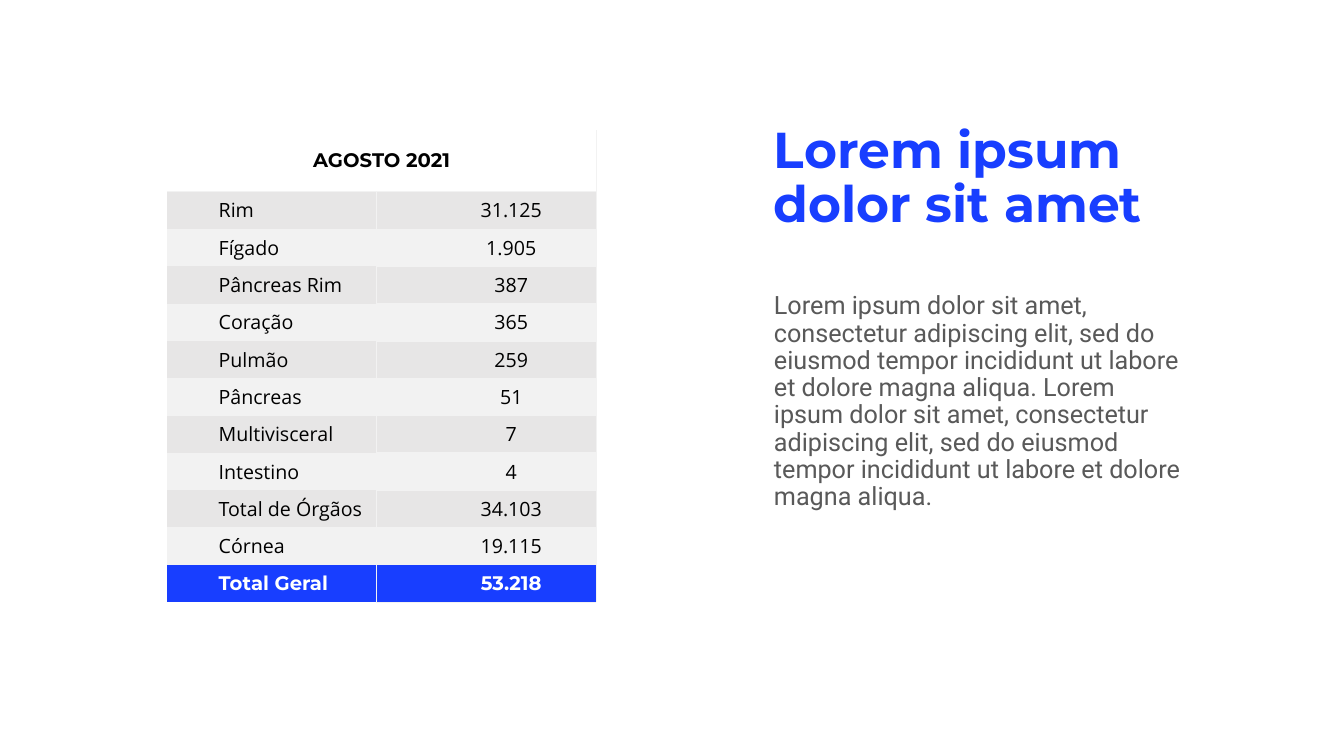
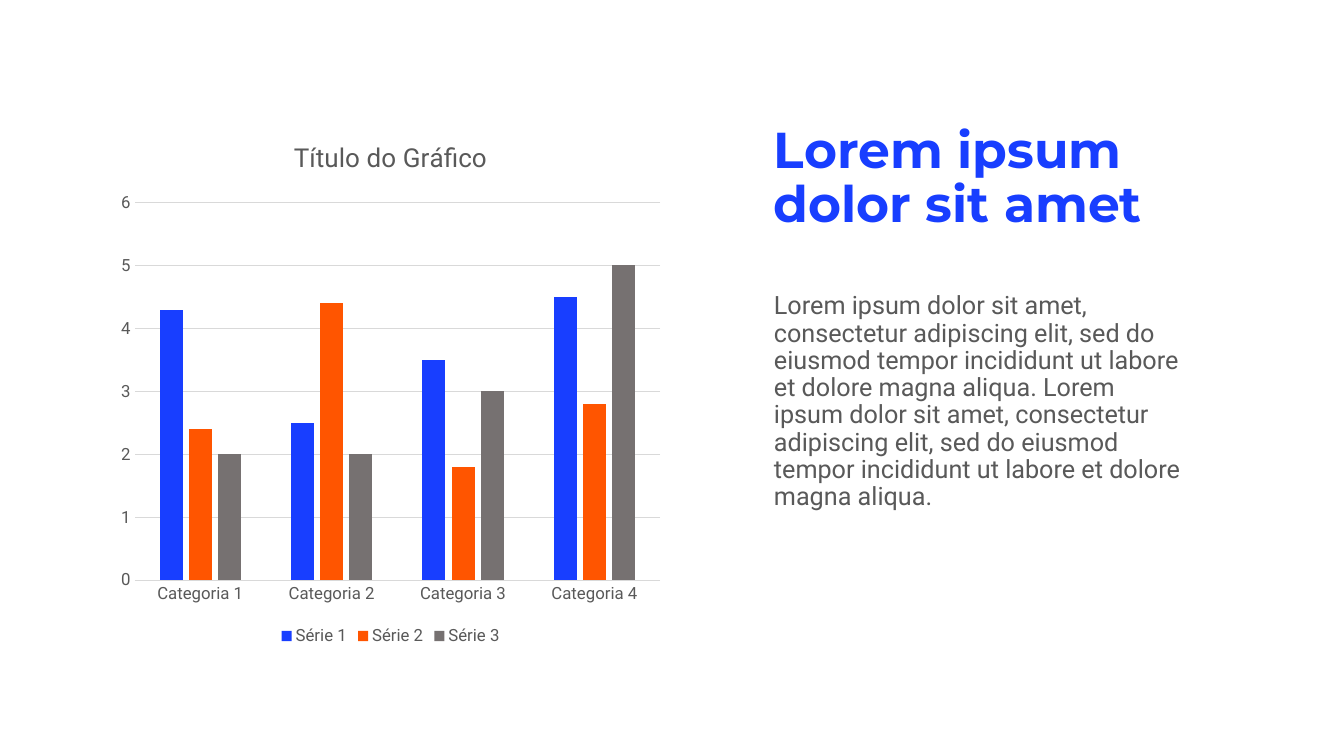
from dataclasses import dataclass

from lxml import etree
from pptx import Presentation
from pptx.chart import data as chart_data
from pptx.dml.color import RGBColor
from pptx.enum import chart as chart_enum, text
from pptx.oxml import ns
from pptx.util import Cm, Pt

HEADING = "Lorem ipsum dolor sit amet"
SENTENCE = (
    "Lorem ipsum dolor sit amet, consectetur adipiscing elit, sed do eiusmod "
    "tempor incididunt ut labore et dolore magna aliqua."
)
BODY = f"{SENTENCE} {SENTENCE}"

TABLE_TITLE = "AGOSTO 2021"
TRANSPLANTS = [
    ("Rim", "31.125"),
    ("Fígado", "1.905"),
    ("Pâncreas Rim", "387"),
    ("Coração", "365"),
    ("Pulmão", "259"),
    ("Pâncreas", "51"),
    ("Multivisceral", "7"),
    ("Intestino", "4"),
    ("Total de Órgãos", "34.103"),
    ("Córnea", "19.115"),
    ("Total Geral", "53.218"),
]

CHART_TITLE = "Título do Gráfico"
CATEGORIES = ["Categoria 1", "Categoria 2", "Categoria 3", "Categoria 4"]
SERIES = [
    ("Série 1", (4.3, 2.5, 3.5, 4.5)),
    ("Série 2", (2.4, 4.4, 1.8, 2.8)),
    ("Série 3", (2, 2, 3, 5)),
]


@dataclass(frozen=True)
class Theme:
    blue: str = "183EFF"
    orange: str = "FF5500"
    gray: str = "767171"
    ink: str = "000000"
    muted: str = "595959"
    white: str = "FFFFFF"
    grid: str = "D9D9D9"
    band_dark: str = "E7E6E6"
    band_light: str = "F2F2F2"
    display: str = "Montserrat"
    reading: str = "Roboto"
    tabular: str = "Open Sans"
    heading_size: float = 36
    body_size: float = 18
    table_size: float = 14
    chart_title_size: float = 18.6
    label_size: float = 12
    hairline: float = 0.5
    grid_line: float = 0.75


THEME = Theme()
HEADING_FONT = (THEME.display, THEME.heading_size, THEME.blue, True)
BODY_FONT = (THEME.reading, THEME.body_size, THEME.muted, False)
TABLE_TITLE_FONT = (THEME.display, THEME.table_size, THEME.ink, True)
ROW_FONT = (THEME.tabular, THEME.table_size, THEME.ink, False)
TOTAL_FONT = (THEME.display, THEME.table_size, THEME.white, True)
CHART_TITLE_FONT = (THEME.reading, THEME.chart_title_size, THEME.muted, False)
LABEL_FONT = (THEME.reading, THEME.label_size, THEME.muted, False)

SLIDE_SIZE = Cm(33.87), Cm(19.05)
HEADING_BOX = Cm(19.25), Cm(3.02), Cm(10.8), Cm(3.58)
BODY_BOX = Cm(19.25), Cm(7.26), Cm(10.8), Cm(9.12)
CHART_BOX = Cm(2.77), Cm(3.02), Cm(14.15), Cm(13.36)
TABLE_ORIGIN = Cm(4.22), Cm(3.28)
COLUMN_WIDTHS = Cm(5.26), Cm(5.54)
HEADER_HEIGHT, ROW_HEIGHT = Cm(1.55), Cm(0.94)
CELL_INDENT = Cm(1.27)
PLAIN_TABLE_STYLE = "{2D5ABB26-0587-4C30-8999-92F81FD0307C}"


def apply(target, **values):
    for name, value in values.items():
        setattr(target, name, value)


def style_font(font, style):
    name, size, color, bold = style
    apply(font, name=name, size=Pt(size), bold=bold)
    font.color.rgb = RGBColor.from_string(color)


def style_line(line, color, width):
    line.color.rgb = RGBColor.from_string(color)
    line.width = Pt(width)


def fill_solid(fill, color):
    fill.solid()
    fill.fore_color.rgb = RGBColor.from_string(color)


def fill_placeholder(shape, box, content, style):
    left, top, width, height = box
    apply(shape, left=left, top=top, width=width, height=height)
    frame = shape.text_frame
    apply(frame, text=content, word_wrap=True, auto_size=text.MSO_AUTO_SIZE.NONE,
          vertical_anchor=text.MSO_ANCHOR.TOP)
    paragraph = frame.paragraphs[0]
    properties = paragraph._p.get_or_add_pPr()
    properties.set("marL", "0")
    properties.set("indent", "0")
    etree.SubElement(properties, ns.qn("a:buNone"))
    apply(paragraph, alignment=text.PP_ALIGN.LEFT, line_spacing=0.9, space_before=Pt(0))
    style_font(paragraph.runs[0].font, style)


def add_text_slide(presentation):
    slide = presentation.slides.add_slide(presentation.slide_layouts[1])
    fill_placeholder(slide.shapes.title, HEADING_BOX, HEADING, HEADING_FONT)
    fill_placeholder(slide.placeholders[1], BODY_BOX, BODY, BODY_FONT)
    return slide


def add_borders(cell, sides):
    properties = cell._tc.get_or_add_tcPr()
    for side in sides:
        line = etree.SubElement(properties, ns.qn(f"a:ln{side}"), w=str(Pt(THEME.hairline)))
        solid = etree.SubElement(line, ns.qn("a:solidFill"))
        etree.SubElement(solid, ns.qn("a:srgbClr"), val=THEME.band_light)


def write_cell(cell, content, style, centered, margin, borders, fill=None, indented=True):
    apply(cell, text=content, vertical_anchor=text.MSO_ANCHOR.MIDDLE,
          margin_left=margin, margin_right=margin, margin_top=margin, margin_bottom=margin)
    paragraph = cell.text_frame.paragraphs[0]
    paragraph.alignment = text.PP_ALIGN.CENTER if centered else text.PP_ALIGN.LEFT
    if indented:
        paragraph.level = 1
        properties = paragraph._p.get_or_add_pPr()
        properties.set("marL", str(CELL_INDENT))
        properties.set("indent", "0")
    style_font(paragraph.runs[0].font, style)
    add_borders(cell, borders)
    if fill:
        fill_solid(cell.fill, fill)
    else:
        cell.fill.background()


def add_transplant_table(slide):
    height = HEADER_HEIGHT + ROW_HEIGHT * len(TRANSPLANTS)
    frame = slide.shapes.add_table(
        len(TRANSPLANTS) + 1, len(COLUMN_WIDTHS), *TABLE_ORIGIN, sum(COLUMN_WIDTHS), height)
    table = frame.table
    apply(table, first_row=False, horz_banding=False)
    table._tbl.tblPr.find(ns.qn("a:tableStyleId")).text = PLAIN_TABLE_STYLE
    for column, width in zip(table.columns, COLUMN_WIDTHS):
        column.width = width
    for index, row in enumerate(table.rows):
        row.height = ROW_HEIGHT if index else HEADER_HEIGHT

    header = table.cell(0, 0)
    header.merge(table.cell(0, 1))
    write_cell(header, TABLE_TITLE, TABLE_TITLE_FONT, True, Cm(0.08), "RB", indented=False)
    add_borders(table.cell(0, 1), "RB")

    for index, values in enumerate(TRANSPLANTS, start=1):
        is_total = index == len(TRANSPLANTS)
        band = THEME.band_dark if index % 2 else THEME.band_light
        for column, value in enumerate(values):
            borders = "LRTB" if column else "RT" if is_total else "R"
            write_cell(table.cell(index, column), value,
                       TOTAL_FONT if is_total else ROW_FONT, column == 1, Cm(0.02),
                       borders, THEME.blue if is_total else band)


def add_series_chart(slide):
    data = chart_data.CategoryChartData()
    data.categories = CATEGORIES
    for name, values in SERIES:
        data.add_series(name, values)
    chart = slide.shapes.add_chart(
        chart_enum.XL_CHART_TYPE.COLUMN_CLUSTERED, *CHART_BOX, data).chart
    style_font(chart.font, LABEL_FONT)

    title = chart.chart_title.text_frame
    title.text = CHART_TITLE
    style_font(title.paragraphs[0].runs[0].font, CHART_TITLE_FONT)

    chart.has_legend = True
    apply(chart.legend, position=chart_enum.XL_LEGEND_POSITION.BOTTOM, include_in_layout=False)
    style_font(chart.legend.font, LABEL_FONT)

    for axis in (chart.category_axis, chart.value_axis):
        apply(axis, major_tick_mark=chart_enum.XL_TICK_MARK.NONE,
              minor_tick_mark=chart_enum.XL_TICK_MARK.NONE)
        style_font(axis.tick_labels.font, LABEL_FONT)
    style_line(chart.category_axis.format.line, THEME.grid, THEME.grid_line)
    chart.value_axis.format.line.fill.background()
    style_line(chart.value_axis.major_gridlines.format.line, THEME.grid, THEME.grid_line)

    plot = chart.plots[0]
    apply(plot, gap_width=219, overlap=-27, vary_by_categories=False)
    for series, color in zip(plot.series, (THEME.blue, THEME.orange, THEME.gray)):
        fill_solid(series.format.fill, color)
        series.invert_if_negative = False


def main():
    presentation = Presentation()
    presentation.slide_width, presentation.slide_height = SLIDE_SIZE
    for add_visual in (add_transplant_table, add_series_chart):
        add_visual(add_text_slide(presentation))
    presentation.save("out.pptx")


if __name__ == "__main__":
    main()
